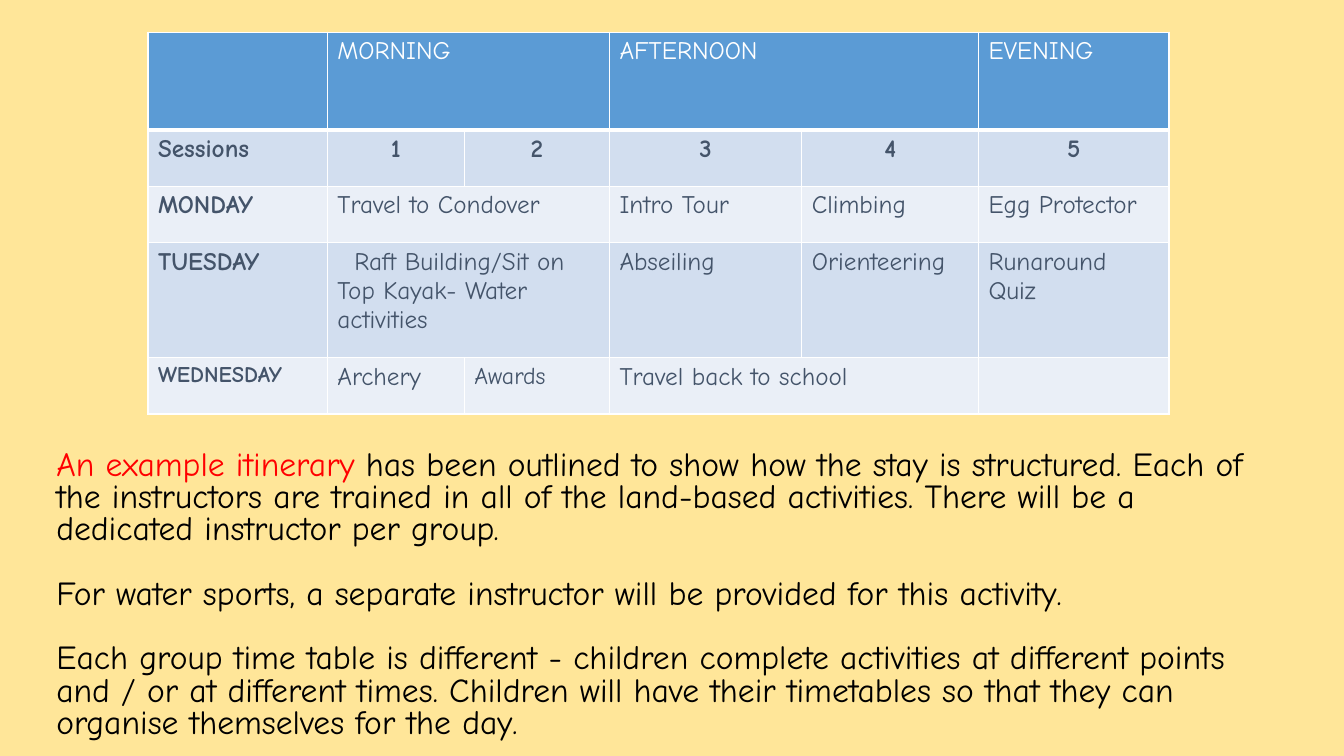
from lxml.etree import SubElement
from pptx import Presentation
from pptx.dml.color import RGBColor
from pptx.enum.text import PP_ALIGN
from pptx.oxml.ns import qn
from pptx.util import Cm, Pt

FONT = "Comic Neue"
SAND = RGBColor(0xFF, 0xE6, 0x99)
BLUE = RGBColor(0x5B, 0x9B, 0xD5)
MID_BLUE = RGBColor(0xD2, 0xDE, 0xEF)
PALE_BLUE = RGBColor(0xEA, 0xEF, 0xF7)
SLATE = RGBColor(0x44, 0x54, 0x6A)
WHITE = RGBColor(0xFF, 0xFF, 0xFF)
BLACK = RGBColor(0, 0, 0)
RED = RGBColor(0xFF, 0, 0)


def add_span(para, text, size, color, bold=False):
    span = para.add_run()
    span.text = text
    span.font.name = FONT
    span.font.size = Pt(size)
    span.font.bold = bold
    span.font.color.rgb = color


def add_borders(cell, bottom_width):
    properties = cell._tc.get_or_add_tcPr()
    for side, width in (("L", 1), ("R", 1), ("T", 1), ("B", bottom_width)):
        line = SubElement(properties, qn(f"a:ln{side}"), w=str(Pt(width)))
        fill = SubElement(line, qn("a:solidFill"))
        SubElement(fill, qn("a:srgbClr"), val=str(WHITE))


deck = Presentation()
deck.slide_width, deck.slide_height = Cm(33.87), Cm(19.05)
page = deck.slides.add_slide(deck.slide_layouts[6])
page.background.fill.solid()
page.background.fill.fore_color.rgb = SAND

# Explanation below the timetable
explanation = [
    [("An example itinerary ", RED),
     ("has been outlined to show how the stay is structured. Each of the "
      "instructors are trained in all of the land-based activities. There "
      "will be a dedicated instructor per group.", BLACK)],
    [("For water sports, a separate instructor will be provided for this "
      "activity.", BLACK)],
    [("Each group time table is different - children complete activities at "
      "different points and / or at different times. Children will have "
      "their timetables so that they can organise themselves for the day.",
      BLACK)],
]
box = page.shapes.add_textbox(Cm(1.17), Cm(11.23), Cm(30.78), Cm(7.65))
frame = box.text_frame
frame.word_wrap = True
for index, spans in enumerate(explanation):
    para = frame.add_paragraph() if index else frame.paragraphs[0]
    para.line_spacing = 0.8
    para.space_before = Pt(23 if index else 0)
    for text, color in spans:
        add_span(para, text, 24, color)

# Timetable: None continues the cell to its left
timetable = [
    ["", "MORNING", None, "AFTERNOON", None, "EVENING"],
    ["Sessions", "1", "2", "3", "4", "5"],
    ["MONDAY", "Travel to Condover", None, "Intro Tour", "Climbing",
     "Egg Protector"],
    ["TUESDAY", "Raft Building/Sit on Top Kayak- Water activities", None,
     "Abseiling", "Orienteering", "Runaround Quiz"],
    ["WEDNESDAY", "Archery", "Awards", "Travel back to school", None, ""],
]
column_widths = [4.52, 3.45, 3.66, 4.85, 4.45, 4.8]
row_heights = [2.46, 1.42, 1.42, 2.9, 1.42]
special_sizes = {"WEDNESDAY": 16, "Awards": 17}

table = page.shapes.add_table(
    len(row_heights), len(column_widths), Cm(3.73), Cm(0.81),
    Cm(sum(column_widths)), Cm(sum(row_heights))).table
for column, width in zip(table.columns, column_widths):
    column.width = Cm(width)
for row, height in zip(table.rows, row_heights):
    row.height = Cm(height)

for r, texts in enumerate(timetable):
    is_header, is_sessions = r == 0, r == 1
    for c, text in enumerate(texts):
        cell = table.cell(r, c)
        add_borders(cell, 3 if is_header else 1)
        cell.fill.solid()
        cell.fill.fore_color.rgb = (
            BLUE if is_header else MID_BLUE if r % 2 else PALE_BLUE)
        if text is None:
            table.cell(r, c - 1).merge(cell)
        elif text:
            para = cell.text_frame.paragraphs[0]
            if is_sessions and c > 0:
                para.alignment = PP_ALIGN.CENTER
            add_span(para, text, special_sizes.get(text, 18),
                     WHITE if is_header else SLATE,
                     is_sessions or (c == 0 and not is_header))

# First-line indent of the water activities
water = table.cell(3, 1).text_frame.paragraphs[0]
water._p.get_or_add_pPr().set("indent", str(Cm(0.43)))

deck.save("out.pptx")
